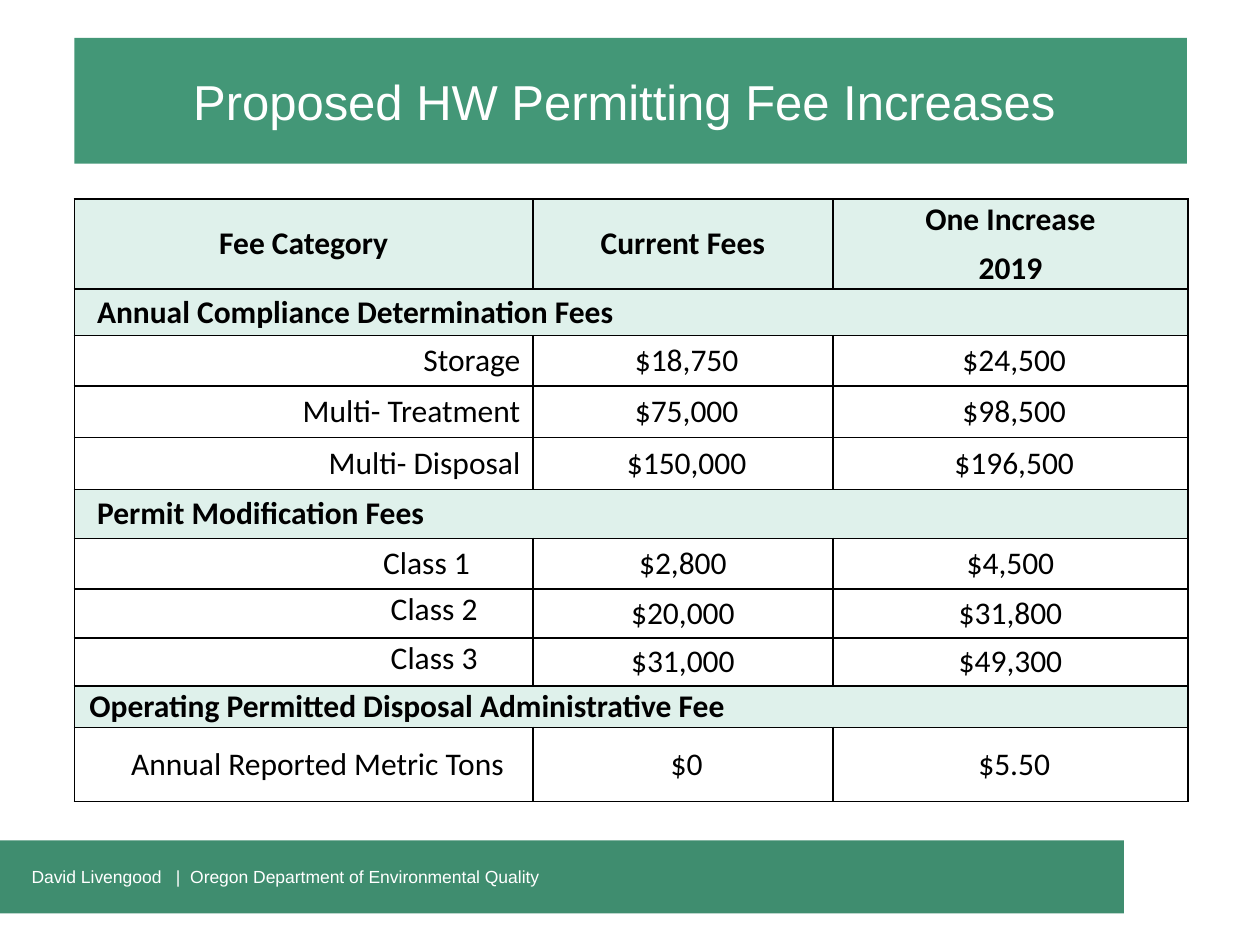
from lxml import etree
from pptx import Presentation
from pptx import util as u
from pptx.dml.color import RGBColor
from pptx.enum import shapes, text
from pptx.oxml.ns import qn

COLORS = {
    "title": "439777",
    "footer": "3F8D6F",
    "section": "DFF1EB",
    "white": "FFFFFF",
    "black": "000000",
}
COLUMN_WIDTHS = [3.64, 2.38, 2.82]
HEADINGS = ["Fee Category", "Current Fees", "One Increase\n2019"]
HEADING_HEIGHT = 0.71
INSET = 0.01
MIDDLE, TOP = text.MSO_ANCHOR.MIDDLE, text.MSO_ANCHOR.TOP
LEFT, CENTER, RIGHT = text.PP_ALIGN.LEFT, text.PP_ALIGN.CENTER, text.PP_ALIGN.RIGHT

# Section: name, row height, left inset, left inset of its fees, rows
# Row: label, current fee, increased fee, row height, right inset, label anchor
SECTIONS = [
    ("Annual Compliance Determination Fees", 0.37, 0.18, 0.07, [
        ("Storage", "$18,750", "$24,500", 0.4, 0.1, MIDDLE),
        ("Multi- Treatment", "$75,000", "$98,500", 0.41, 0.1, MIDDLE),
        ("Multi- Disposal", "$150,000", "$196,500", 0.41, 0.1, MIDDLE),
    ]),
    ("Permit Modification Fees", 0.39, 0.18, INSET, [
        ("Class 1", "$2,800", "$4,500", 0.4, 0.5, MIDDLE),
        ("Class 2", "$20,000", "$31,800", 0.39, 0.44, TOP),
        ("Class 3", "$31,000", "$49,300", 0.38, 0.44, TOP),
    ]),
    ("Operating Permitted Disposal Administrative Fee", 0.33, 0.12, 0.07, [
        ("Annual Reported Metric Tons", "$0", "$5.50", 0.59, 0.23, MIDDLE),
    ]),
]


def rgb(name):
    return RGBColor.from_string(COLORS[name])


def format_text(text_frame, font, size, color, align, bold=False):
    for paragraph in text_frame.paragraphs:
        paragraph.alignment = align
        for run in paragraph.runs:
            run.font.name = font
            run.font.size = u.Pt(size)
            run.font.bold = bold
            run.font.color.rgb = rgb(color)


def add_band(slide, box, color, words, size, align, left=0.1, right=0.1):
    """Add a plain coloured bar with white text."""
    shape = slide.shapes.add_shape(
        shapes.MSO_SHAPE.RECTANGLE, *[u.Inches(length) for length in box])
    shape.shadow.inherit = False
    shape.fill.solid()
    shape.fill.fore_color.rgb = rgb(color)
    shape.line.fill.background()
    text_frame = shape.text_frame
    text_frame.text = words
    text_frame.word_wrap = True
    text_frame.vertical_anchor = MIDDLE
    text_frame.margin_left = u.Inches(left)
    text_frame.margin_right = u.Inches(right)
    format_text(text_frame, "Arial", size, "white", align)


def add_borders(cell):
    properties = cell._tc.get_or_add_tcPr()
    for index, side in enumerate(("a:lnL", "a:lnR", "a:lnT", "a:lnB")):
        line = etree.Element(qn(side), w=str(u.Pt(1)))
        fill = etree.SubElement(line, qn("a:solidFill"))
        etree.SubElement(fill, qn("a:srgbClr"), val=COLORS["black"])
        properties.insert(index, line)


def fill_cell(cell, words, align, color="white", bold=False,
              left=INSET, right=INSET, anchor=MIDDLE):
    cell.fill.solid()
    cell.fill.fore_color.rgb = rgb(color)
    cell.text_frame.text = words
    cell.vertical_anchor = anchor
    cell.margin_left, cell.margin_right = u.Inches(left), u.Inches(right)
    cell.margin_top = cell.margin_bottom = u.Inches(INSET)
    format_text(cell.text_frame, "Calibri", 18, "black", align, bold)


def add_fee_table(slide):
    row_count = 1 + sum(1 + len(section[-1]) for section in SECTIONS)
    table = slide.shapes.add_table(
        row_count, len(COLUMN_WIDTHS), u.Inches(0.59), u.Inches(1.58),
        u.Inches(sum(COLUMN_WIDTHS)), u.Inches(4.78)).table
    for column, width in zip(table.columns, COLUMN_WIDTHS):
        column.width = u.Inches(width)

    # Heading row
    heights = [HEADING_HEIGHT]
    for column, heading in enumerate(HEADINGS):
        cell = table.cell(0, column)
        fill_cell(cell, heading, CENTER, "section", bold=True)
        for paragraph in cell.text_frame.paragraphs:
            paragraph.space_after = u.Pt(6)

    # Sections with their fee rows
    for name, section_height, section_left, fee_left, rows in SECTIONS:
        cell = table.cell(len(heights), 0)
        cell.merge(table.cell(len(heights), len(COLUMN_WIDTHS) - 1))
        fill_cell(cell, name, LEFT, "section", bold=True, left=section_left)
        heights.append(section_height)
        for label, current, increased, height, right, anchor in rows:
            row = len(heights)
            fill_cell(table.cell(row, 0), label, RIGHT, right=right, anchor=anchor)
            for column, fee in enumerate((current, increased), start=1):
                fill_cell(table.cell(row, column), fee, CENTER, left=fee_left)
            heights.append(height)

    for row, height in zip(table.rows, heights):
        row.height = u.Inches(height)
    for cell in table.iter_cells():
        add_borders(cell)


def main():
    presentation = Presentation()
    presentation.slide_width = u.Inches(10)
    presentation.slide_height = u.Inches(7.5)
    slide = presentation.slides.add_slide(presentation.slide_layouts[6])

    # Title, footer and table
    add_band(slide, (0.59, 0.3, 8.83, 1), "title",
             "Proposed HW Permitting Fee Increases", 28, CENTER, right=0.2)
    add_band(slide, (0, 6.67, 8.92, 0.58), "footer",
             "David Livengood   |  Oregon Department of Environmental Quality",
             10, LEFT, left=0.25)
    add_fee_table(slide)
    presentation.save("out.pptx")


if __name__ == "__main__":
    main()
